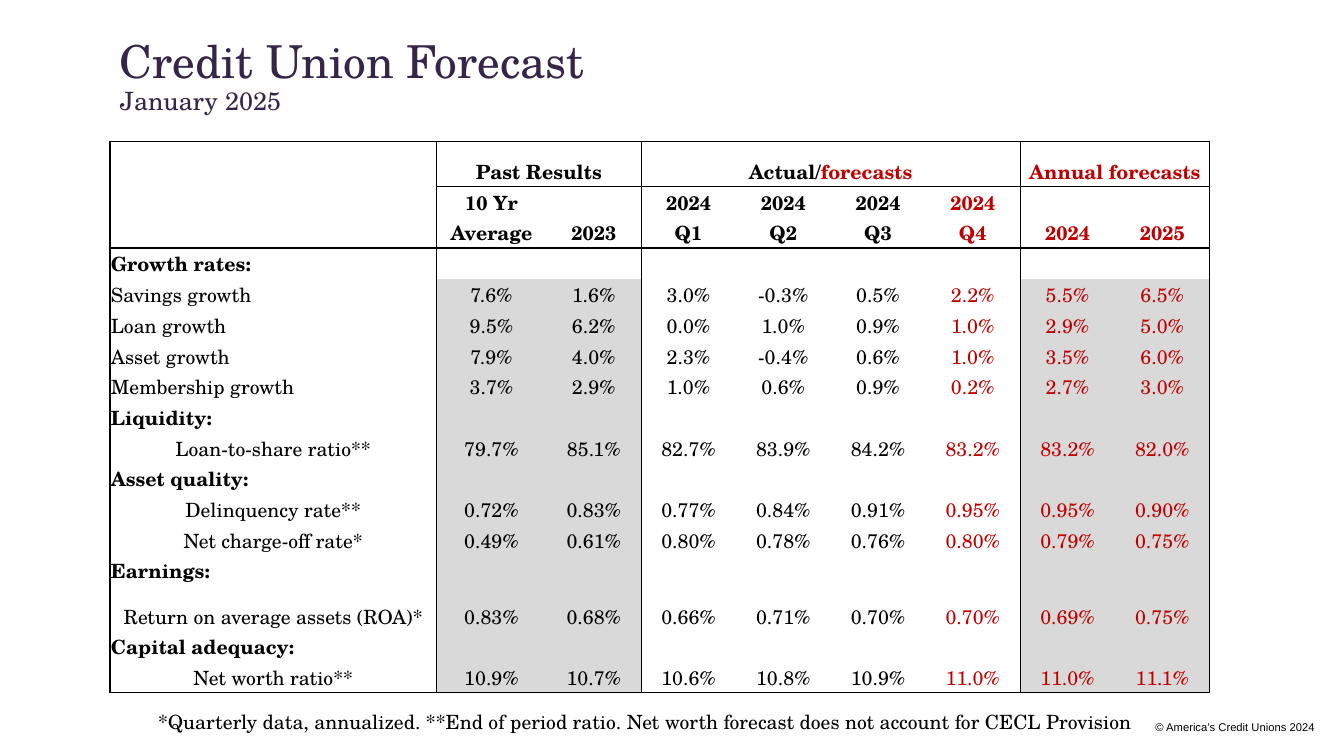
from lxml.etree import SubElement
from pptx import Presentation
from pptx.dml.color import RGBColor
from pptx.enum.text import MSO_ANCHOR, MSO_AUTO_SIZE, PP_ALIGN
from pptx.oxml.ns import qn
from pptx.util import Inches, Pt

BLACK = RGBColor(0x00, 0x00, 0x00)
RED = RGBColor(0xC0, 0x00, 0x00)
PURPLE = RGBColor(0x34, 0x25, 0x49)
GREY = RGBColor(0xD9, 0xD9, 0xD9)
SERIF = "TeX Gyre Schola"
NO_STYLE = "{2D5ABB26-0587-4C30-8999-92F81FD0307C}"

# Table grid: sizes in inches, rules given as grid edges
LEFT, TOP, WIDTH, HEIGHT = 1.09, 1.4, 10.92, 5.47
COLS = [3.24, 1.09] + [0.94] * 7
GROUP_ROW, PERIOD_ROW, ROA_ROW = 0.45, 0.61, 0.45
BODY_ROW = (HEIGHT - GROUP_ROW - PERIOD_ROW - ROA_ROW) / 13
ROWS = [GROUP_ROW, PERIOD_ROW] + [BODY_ROW] * 11 + [ROA_ROW] + [BODY_ROW] * 2
V_EDGES = {0, 1, 3, 7, 9}
H_EDGES = {0, 1, 2, len(ROWS)}
GREY_COLS = {1, 2, 7, 8}
FIRST_RED_COL = 6
FIRST_GREY_ROW = 3

GROUPS = [(1, 2, [("Past Results", BLACK)]),
          (3, 6, [("Actual/", BLACK), ("forecasts", RED)]),
          (7, 8, [("Annual forecasts", RED)])]
PERIODS = ["10 Yr Average", "2023", "2024\vQ1", "2024\vQ2", "2024\vQ3",
           "2024\vQ4", "2024", "2025"]
SECTIONS = [
    ("Growth rates:", PP_ALIGN.LEFT, [
        ("Savings growth", "7.6% 1.6% 3.0% -0.3% 0.5% 2.2% 5.5% 6.5%"),
        ("Loan growth", "9.5% 6.2% 0.0% 1.0% 0.9% 1.0% 2.9% 5.0%"),
        ("Asset growth", "7.9% 4.0% 2.3% -0.4% 0.6% 1.0% 3.5% 6.0%"),
        ("Membership growth", "3.7% 2.9% 1.0% 0.6% 0.9% 0.2% 2.7% 3.0%")]),
    ("Liquidity:", PP_ALIGN.CENTER, [
        ("Loan-to-share ratio**",
         "79.7% 85.1% 82.7% 83.9% 84.2% 83.2% 83.2% 82.0%")]),
    ("Asset quality:", PP_ALIGN.CENTER, [
        ("Delinquency rate**",
         "0.72% 0.83% 0.77% 0.84% 0.91% 0.95% 0.95% 0.90%"),
        ("Net charge-off rate*",
         "0.49% 0.61% 0.80% 0.78% 0.76% 0.80% 0.79% 0.75%")]),
    ("Earnings:", PP_ALIGN.CENTER, [
        ("Return on average assets (ROA)*",
         "0.83% 0.68% 0.66% 0.71% 0.70% 0.70% 0.69% 0.75%")]),
    ("Capital adequacy:", PP_ALIGN.CENTER, [
        ("Net worth ratio**",
         "10.9% 10.7% 10.6% 10.8% 10.9% 11.0% 11.0% 11.1%")]),
]


def add_text(p, text, size=14, font=SERIF, color=BLACK, bold=False,
             align=PP_ALIGN.LEFT):
    """Append text to a paragraph; a vertical tab starts a new line."""
    p.alignment = align
    for i, line in enumerate(text.split("\v")):
        if i:
            p.add_line_break()
        r = p.add_run()
        r.text = line
        r.font.size, r.font.name = Pt(size), font
        r.font.bold, r.font.color.rgb = bold, color


def add_title(s):
    sp = s.shapes.title
    sp.left, sp.top = Inches(LEFT), Inches(0.37)
    sp.width, sp.height = Inches(WIDTH), Inches(0.8)
    tf = sp.text_frame
    tf.auto_size = MSO_AUTO_SIZE.NONE
    tf.vertical_anchor = MSO_ANCHOR.MIDDLE
    p = tf.paragraphs[0]
    p.line_spacing = 0.9
    add_text(p, "Credit Union Forecast", size=32.4, color=PURPLE)
    p.add_line_break()
    add_text(p, "January 2025", size=18, color=PURPLE)


def add_note(s, text, left, top, width, height, **fmt):
    tf = s.shapes.add_textbox(Inches(left), Inches(top), Inches(width),
                              Inches(height)).text_frame
    tf.word_wrap = True
    tf.auto_size = MSO_AUTO_SIZE.SHAPE_TO_FIT_TEXT
    add_text(tf.paragraphs[0], text, **fmt)


def add_border(cell, side, ruled):
    """Rule one side of a cell, or state that it has no line."""
    ln = SubElement(cell._tc.get_or_add_tcPr(), qn(f"a:ln{side}"), w="12700")
    if ruled:
        fill = SubElement(ln, qn("a:solidFill"))
        SubElement(fill, qn("a:srgbClr"), val=str(BLACK))
    else:
        SubElement(ln, qn("a:noFill"))


def format_cell(cell, row, col):
    cell.margin_left = cell.margin_right = cell.margin_top = Inches(0.01)
    cell.margin_bottom = 0
    cell.vertical_anchor = MSO_ANCHOR.BOTTOM
    # Borders where the cell meets a ruled edge; the corner has no inner rule
    height = cell.span_height if cell.is_merge_origin else 1
    width = cell.span_width if cell.is_merge_origin else 1
    for side, edge in (("L", col), ("R", col + width)):
        add_border(cell, side, edge in V_EDGES)
    for side, edge in (("T", row), ("B", row + height)):
        add_border(cell, side, edge in H_EDGES and (edge, col) != (1, 0))
    # Shading, and a small line height for empty cells
    if row >= FIRST_GREY_ROW and col in GREY_COLS:
        cell.fill.solid()
        cell.fill.fore_color.rgb = GREY
    else:
        cell.fill.background()
    if not cell.text_frame.text:
        p = cell.text_frame.paragraphs[0]
        SubElement(p._p, qn("a:endParaRPr"), sz="1000")


def fill_values(tbl, row, values, bold=False):
    for col, value in enumerate(values, 1):
        add_text(tbl.cell(row, col).text_frame.paragraphs[0], value, bold=bold,
                 color=RED if col >= FIRST_RED_COL else BLACK,
                 align=PP_ALIGN.CENTER)


def add_forecast_table(s):
    frame = s.shapes.add_table(len(ROWS), len(COLS), Inches(LEFT), Inches(TOP),
                               Inches(WIDTH), Inches(HEIGHT))
    tbl = frame.table
    tbl.first_row = tbl.horz_banding = False
    tbl._tbl.tblPr.find(qn("a:tableStyleId")).text = NO_STYLE
    for column, width in zip(tbl.columns, COLS):
        column.width = Inches(width)
    for row, height in zip(tbl.rows, ROWS):
        row.height = Inches(height)

    # Header
    tbl.cell(0, 0).merge(tbl.cell(1, 0))
    for first, last, parts in GROUPS:
        cell = tbl.cell(0, first)
        cell.merge(tbl.cell(0, last))
        for text, color in parts:
            add_text(cell.text_frame.paragraphs[0], text, color=color,
                     bold=True, align=PP_ALIGN.CENTER)
    fill_values(tbl, 1, PERIODS, bold=True)

    # Sections
    row = 2
    for heading, align, measures in SECTIONS:
        add_text(tbl.cell(row, 0).text_frame.paragraphs[0], heading, bold=True)
        for row, (label, values) in enumerate(measures, row + 1):
            add_text(tbl.cell(row, 0).text_frame.paragraphs[0], label,
                     align=align)
            fill_values(tbl, row, values.split())
        row += 1

    for row in range(len(ROWS)):
        for col in range(len(COLS)):
            format_cell(tbl.cell(row, col), row, col)


def main():
    prs = Presentation()
    prs.slide_width, prs.slide_height = Inches(13.33), Inches(7.5)
    s = prs.slides.add_slide(prs.slide_layouts[5])
    add_note(s, "© America’s Credit Unions 2024", 10.66, 7.1, 2.48, 0.24,
             size=8, font="Arial", align=PP_ALIGN.RIGHT)
    add_title(s)
    add_forecast_table(s)
    add_note(s, "*Quarterly data, annualized. **End of period ratio. "
             "Net worth forecast does not account for CECL Provision",
             1.47, 6.99, 10.19, 0.34)
    prs.save("out.pptx")


if __name__ == "__main__":
    main()
